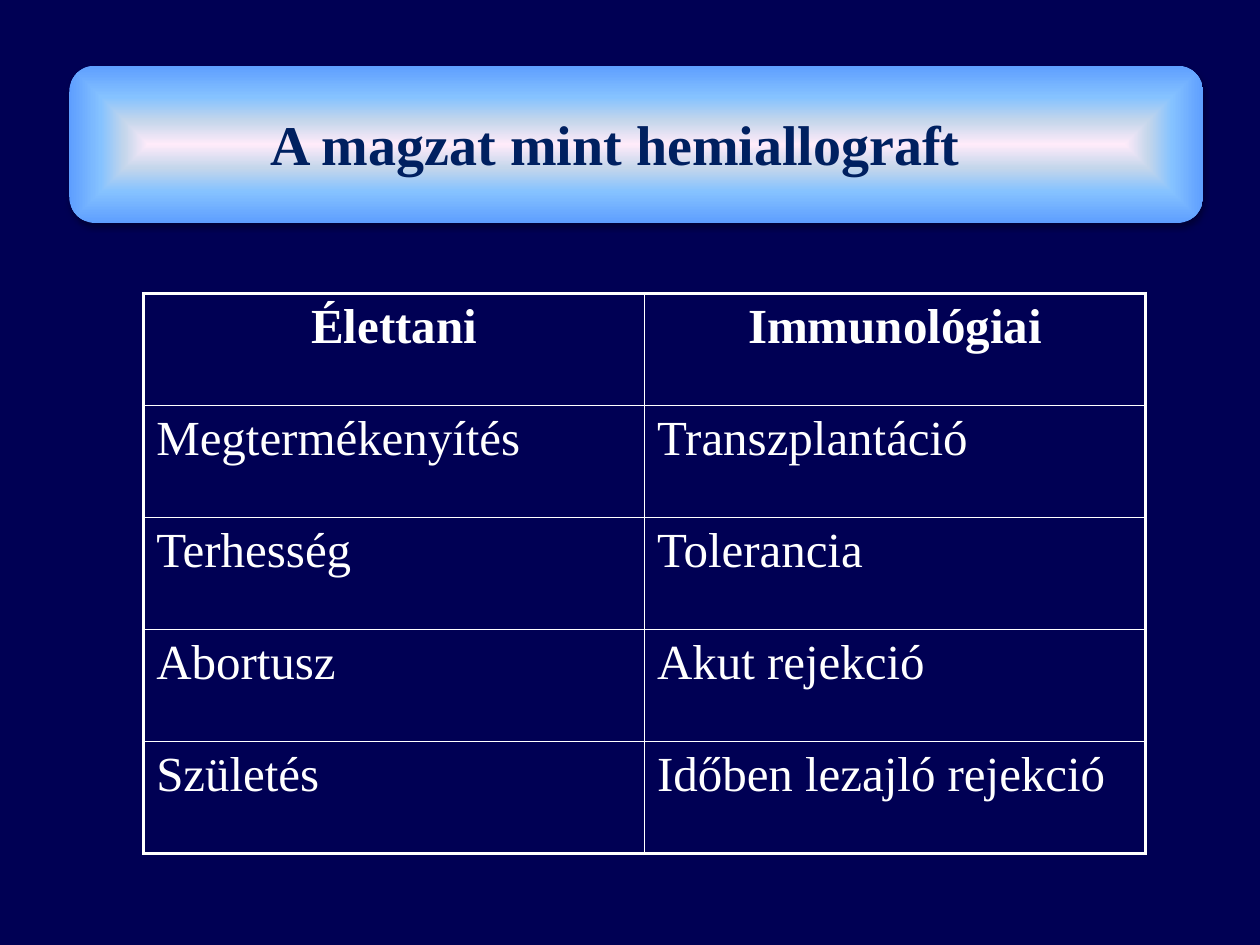
from pptx import Presentation
from pptx.dml.color import RGBColor
from pptx.enum import shapes, text
from pptx.oxml import parse_xml
from pptx.oxml.ns import nsdecls
from pptx.util import Pt

# Content
TITLE = "A magzat mint hemiallograft"
ROWS = [
    ("Élettani", "Immunológiai"),
    ("Megtermékenyítés", "Transzplantáció"),
    ("Terhesség", "Tolerancia"),
    ("Abortusz", "Akut rejekció"),
    ("Születés", "Időben lezajló rejekció"),
]

THEME = {
    "font": "Times New Roman",
    "title_size": 32,
    "cell_size": 28,
    "background": "000054",
    "title": "002060",
    "table": "FFFFFF",
    "shadow": "000000",
    "banner": [(0, "FFEBFA"), (30, "C4D6EB"), (60, "85C2FF"), (100, "5E9EFF")],
    "outer_line": 2.25,
    "inner_line": 1,
}

# Layout: left, top, width, height in points
BANNER = (39.6, 37.44, 648, 90)
TITLE_BOX = (54, 59.04, 595.44, 46.08)
TABLE = (82.08, 167.76, 572.4, 320)


def points(box):
    return [Pt(length) for length in box]


def style(paragraph, size, color, bold):
    paragraph.font.name = THEME["font"]
    paragraph.font.size = Pt(size)
    paragraph.font.bold = bold
    paragraph.font.color.rgb = RGBColor.from_string(color)


def add_banner(slide):
    banner = slide.shapes.add_shape(shapes.MSO_SHAPE.ROUNDED_RECTANGLE, *points(BANNER))
    banner.line.fill.background()

    # Gradient running from the centre to the edges
    banner.fill.gradient()
    stops = "".join(
        f'<a:gs pos="{percent * 1000}"><a:srgbClr val="{color}"/></a:gs>'
        for percent, color in THEME["banner"])
    gradient = parse_xml(
        f'<a:gradFill {nsdecls("a")} rotWithShape="1"><a:gsLst>{stops}</a:gsLst>'
        '<a:path path="shape"><a:fillToRect l="50000" t="50000" r="50000" b="50000"/>'
        '</a:path></a:gradFill>')
    properties = banner._element.spPr
    properties.replace(properties.find("{*}gradFill"), gradient)

    # Soft shadow below
    banner.shadow.inherit = False
    properties.find("{*}effectLst").append(parse_xml(
        f'<a:outerShdw {nsdecls("a")} blurRad="{Pt(3.5)}" dist="{Pt(2.2)}" '
        f'dir="5400000" rotWithShape="0"><a:srgbClr val="{THEME["shadow"]}">'
        '<a:alpha val="32000"/></a:srgbClr></a:outerShdw>'))


def add_title(slide):
    title = slide.shapes.title
    title.left, title.top, title.width, title.height = points(TITLE_BOX)
    slide.shapes._spTree.append(title._element)  # in front of the banner
    frame = title.text_frame
    frame.text = TITLE
    frame.word_wrap = True
    frame.auto_size = text.MSO_AUTO_SIZE.NONE
    frame.vertical_anchor = text.MSO_ANCHOR.TOP
    heading = frame.paragraphs[0]
    heading.alignment = text.PP_ALIGN.CENTER
    heading.line_spacing = 1.0
    heading.space_before = Pt(0)
    style(heading, THEME["title_size"], THEME["title"], True)


def set_borders(cell, outer_sides):
    properties = cell._tc.get_or_add_tcPr()
    for position, (side, outer) in enumerate(outer_sides.items()):
        width = THEME["outer_line" if outer else "inner_line"]
        properties.insert(position, parse_xml(
            f'<a:ln{side} {nsdecls("a")} w="{Pt(width)}"><a:solidFill>'
            f'<a:srgbClr val="{THEME["table"]}"/></a:solidFill></a:ln{side}>'))


def add_comparison(slide):
    last_row, last_column = len(ROWS) - 1, len(ROWS[0]) - 1
    table = slide.shapes.add_table(len(ROWS), len(ROWS[0]), *points(TABLE)).table
    table.horz_banding = False
    for r, row in enumerate(ROWS):
        for c, term in enumerate(row):
            cell = table.cell(r, c)
            cell.fill.background()
            cell.text = term
            entry = cell.text_frame.paragraphs[0]
            entry.alignment = text.PP_ALIGN.LEFT if r else text.PP_ALIGN.CENTER
            style(entry, THEME["cell_size"], THEME["table"], r == 0)
            set_borders(cell, {"L": c == 0, "R": c == last_column,
                               "T": r == 0, "B": r == last_row})


def main():
    deck = Presentation()
    deck.slide_width, deck.slide_height = Pt(720), Pt(540)
    slide = deck.slides.add_slide(deck.slide_layouts[5])
    slide.background.fill.solid()
    slide.background.fill.fore_color.rgb = RGBColor.from_string(THEME["background"])
    add_banner(slide)
    add_comparison(slide)
    add_title(slide)
    deck.save("out.pptx")


if __name__ == "__main__":
    main()
